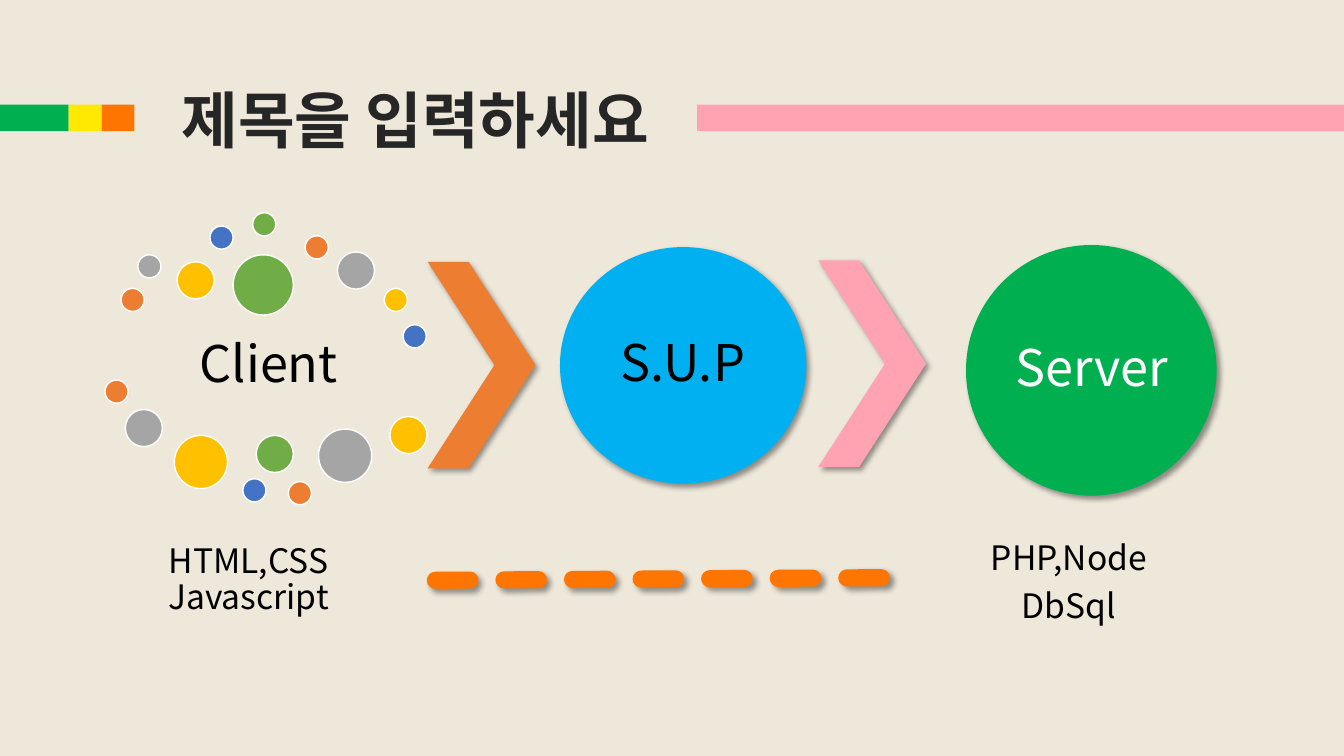
import itertools

import pptx
import pptx.dml.color
import pptx.enum.shapes
import pptx.enum.text
import pptx.oxml
import pptx.oxml.ns
import pptx.util

Pt = pptx.util.Pt
RGBColor = pptx.dml.color.RGBColor
MSO_SHAPE = pptx.enum.shapes.MSO_SHAPE
MSO_ANCHOR = pptx.enum.text.MSO_ANCHOR

FONT = "Noto Sans CJK KR"
CREAM = RGBColor(0xEE, 0xE8, 0xDB)
CHARCOAL = RGBColor(0x26, 0x26, 0x26)
BLACK = RGBColor(0, 0, 0)
WHITE = RGBColor(0xFF, 0xFF, 0xFF)
EMERALD = RGBColor(0, 0xB0, 0x50)
YELLOW = RGBColor(0xFF, 0xE8, 0x02)
BRIGHT_ORANGE = RGBColor(0xFF, 0x75, 0x01)
PINK = RGBColor(0xFF, 0xA2, 0xB1)
SKY = RGBColor(0, 0xB0, 0xF0)
ORANGE = RGBColor(0xED, 0x7D, 0x31)
GRAY = RGBColor(0xA5, 0xA5, 0xA5)
GOLD = RGBColor(0xFF, 0xC0, 0)
BLUE = RGBColor(0x44, 0x72, 0xC4)
GREEN = RGBColor(0x70, 0xAD, 0x47)

SMALL, MEDIUM, LARGE, LARGEST = 16.5, 26.5, 38, 43
CLIENT_DOTS = [
    (86.5, 206, SMALL), (98.5, 182, SMALL), (126.5, 187, MEDIUM),
    (150, 161.5, SMALL), (180.5, 152, SMALL), (218, 168.5, SMALL),
    (241, 180, MEDIUM), (274.5, 206, SMALL), (288, 232, SMALL),
    (166.5, 182, LARGEST), (75, 271.5, SMALL), (89.5, 292.5, MEDIUM),
    (124.5, 311, LARGE), (173.5, 342, SMALL), (183, 311, MEDIUM),
    (206, 344, SMALL), (227.5, 306.5, LARGE), (278.5, 297.5, MEDIUM),
]
SHADOW = (
    '<a:effectLst %s><a:outerShdw blurRad="%d" dist="%d" dir="2700000" '
    'algn="tl" rotWithShape="0"><a:srgbClr val="000000">'
    '<a:alpha val="40000"/></a:srgbClr></a:outerShdw></a:effectLst>'
    % (pptx.oxml.ns.nsdecls("a"), Pt(4), Pt(3))
)


def cast_shadow(element):
    properties = element.spPr
    for effects in properties.findall(pptx.oxml.ns.qn("a:effectLst")):
        properties.remove(effects)
    properties.append(pptx.oxml.parse_xml(SHADOW))


def add_figure(slide, kind, box, color, outline=None, shadowed=False):
    figure = slide.shapes.add_shape(kind, *map(Pt, box))
    figure.shadow.inherit = False
    figure.fill.solid()
    figure.fill.fore_color.rgb = color
    if outline is None:
        figure.line.fill.background()
    else:
        figure.line.color.rgb = outline
        figure.line.width = Pt(1)
    if shadowed:
        cast_shadow(figure._element)
    return figure


def add_label(slide, box, lines, size, color, inset=3.6, spacing=0.9,
              before=0, after=0.35, anchor=MSO_ANCHOR.MIDDLE, bold=False):
    frame = slide.shapes.add_textbox(*map(Pt, box)).text_frame
    frame.word_wrap = True
    frame.vertical_anchor = anchor
    frame.margin_left = frame.margin_right = Pt(inset)
    frame.margin_top = frame.margin_bottom = Pt(inset)
    frame.text = "\n".join(lines)
    for paragraph in frame.paragraphs:
        paragraph.alignment = pptx.enum.text.PP_ALIGN.CENTER
        paragraph.line_spacing = spacing
        paragraph.space_before = Pt(size * before)
        paragraph.space_after = Pt(size * after)
        paragraph.font.name = FONT
        paragraph.font.size = Pt(size)
        paragraph.font.bold = bold
        paragraph.font.color.rgb = color
        for run in paragraph.runs:
            east_asian = pptx.oxml.parse_xml(
                '<a:ea %s typeface="%s"/>' % (pptx.oxml.ns.nsdecls("a"), FONT))
            run.font._element.append(east_asian)


def add_chevron(slide, left, top, color):
    chevron = add_figure(slide, MSO_SHAPE.CHEVRON, (left, top, 77, 147.5),
                         color, shadowed=True)
    chevron.adjustments[0] = 0.62


def add_dashed_link(slide, start, end):
    link = slide.shapes.add_connector(
        pptx.enum.shapes.MSO_CONNECTOR.STRAIGHT, *map(Pt, start + end))
    link.line.color.rgb = BRIGHT_ORANGE
    link.line.width = Pt(12.25)
    outline = link.line._get_or_add_ln()
    outline.set("cap", "rnd")
    outline.append(pptx.oxml.parse_xml(
        '<a:prstDash %s val="sysDash"/>' % pptx.oxml.ns.nsdecls("a")))
    cast_shadow(link._element)


def add_header(slide):
    add_label(slide, (96, 65.5, 401.5, 46), ["제목을 입력하세요"], 44, CHARCOAL,
              spacing=0.8, before=0.2, after=0, anchor=MSO_ANCHOR.TOP, bold=True)
    for left, width, color in [(0, 49, EMERALD), (49, 23.5, YELLOW),
                               (72.5, 23.5, BRIGHT_ORANGE), (498, 462, PINK)]:
        add_figure(slide, MSO_SHAPE.RECTANGLE, (left, 74.75, width, 19), color)


def add_client(slide):
    add_label(slide, (87, 227, 210, 69), ["Client"], 36, BLACK)
    add_label(slide, (72.5, 350, 210, 130), ["HTML,CSS Javascript"], 24, BLACK,
              inset=2.4)
    colors = itertools.cycle([ORANGE, GRAY, GOLD, BLUE, GREEN])
    for (left, top, diameter), color in zip(CLIENT_DOTS, colors):
        add_figure(slide, MSO_SHAPE.OVAL, (left, top, diameter, diameter),
                   color, outline=WHITE)


def main():
    deck = pptx.Presentation()
    deck.slide_width, deck.slide_height = Pt(960), Pt(540)
    slide = deck.slides.add_slide(deck.slide_layouts[6])
    slide.background.fill.solid()
    slide.background.fill.fore_color.rgb = CREAM

    add_header(slide)
    add_client(slide)
    add_chevron(slide, 305.5, 187, ORANGE)
    add_figure(slide, MSO_SHAPE.OVAL, (400, 176.5, 176, 169), SKY, shadowed=True)
    add_label(slide, (425.5, 201, 124.5, 119.5), ["S.U.P"], 36, BLACK)
    add_label(slide, (658, 352, 211, 130), ["PHP,Node", "DbSql"], 24, BLACK,
              inset=2.4)
    add_chevron(slide, 584.5, 186, PINK)
    add_figure(slide, MSO_SHAPE.OVAL, (690, 175, 179, 179), EMERALD, shadowed=True)
    add_label(slide, (716.5, 201, 126.5, 126.5), ["Server"], 36, WHITE, inset=0)
    add_dashed_link(slide, (311, 414.5), (653, 412.5))
    deck.save("out.pptx")


if __name__ == "__main__":
    main()
